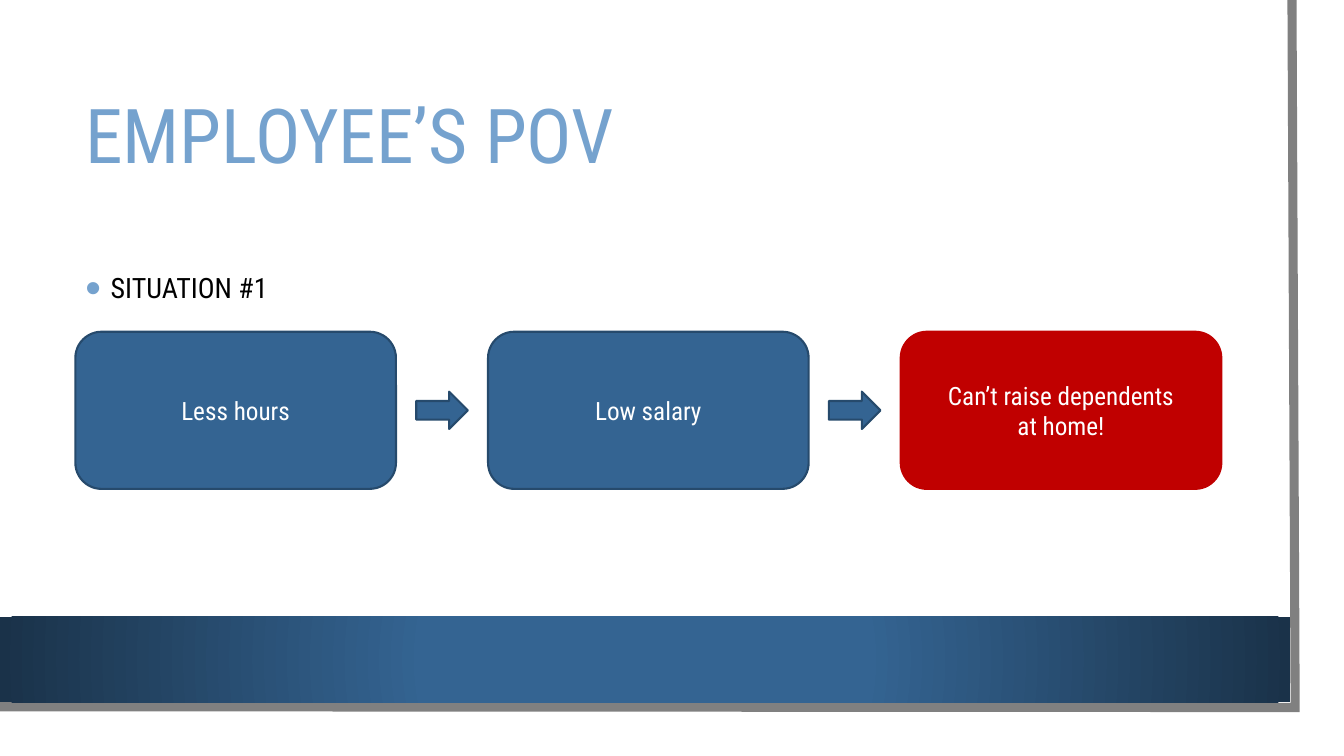
import pptx
import pptx.util
import pptx.oxml
import pptx.oxml.ns
import pptx.dml.color
import pptx.enum.shapes
import pptx.enum.text
from dataclasses import dataclass

Cm = pptx.util.Cm
Pt = pptx.util.Pt
Kind = pptx.enum.shapes.MSO_SHAPE
Align = pptx.enum.text.PP_ALIGN
Mid = pptx.enum.text.MSO_ANCHOR.MIDDLE
Top = pptx.enum.text.MSO_ANCHOR.TOP


@dataclass(frozen=True)
class Theme:
    """Colours, font and type sizes of the slide."""
    font: str = "Roboto Condensed"
    blue: str = "346492"
    edge: str = "264A6C"
    navy: str = "1A3249"
    sky: str = "75A2CE"
    red: str = "C00000"
    gray: str = "808080"
    white: str = "FFFFFF"
    black: str = "000000"
    head: int = 54
    body: int = 20
    label: int = 18


def rgb(code):
    """Return the colour for a hex code."""
    return pptx.dml.color.RGBColor.from_string(code)


def node(xml):
    """Return an XML element in the drawing namespace."""
    space = pptx.oxml.ns.nsdecls("a")
    return pptx.oxml.parse_xml(xml.replace("/>", f" {space}/>", 1)
                               if xml.count("<") == 1
                               else xml.replace(">", f" {space}>", 1))


def write(frame, text, *, font, size, color, align=Align.LEFT,
          anchor=Mid, space=1.0, bullet=None):
    """Fill a text frame, one paragraph a line."""
    frame.word_wrap = True
    frame.vertical_anchor = anchor
    for i, line in enumerate(text.split("\n")):
        para = frame.add_paragraph() if i else frame.paragraphs[0]
        if bullet:
            props = para._p.get_or_add_pPr()
            props.set("marL", str(Cm(0.64)))
            props.set("indent", str(-Cm(0.64)))
            props.append(node(f'<a:buClr><a:srgbClr val="{bullet}"/></a:buClr>'))
            props.append(node('<a:buSzPct val="160000"/>'))
            props.append(node('<a:buFont typeface="Arial"/>'))
            props.append(node('<a:buChar char="•"/>'))
        para.alignment = align
        para.line_spacing = space
        run = para.add_run()
        run.text = line
        run.font.name = font
        run.font.size = Pt(size)
        run.font.color.rgb = rgb(color)


class Deck:
    """Holds the theme and the current slide."""

    def __init__(self, theme):
        """Open a wide deck with one blank slide."""
        self.theme = theme
        self.file = pptx.Presentation()
        self.file.slide_width = Cm(33.87)
        self.file.slide_height = Cm(19.05)
        self.slide = self.file.slides.add_slide(self.file.slide_layouts[6])

    def shape(self, kind, x, y, w, h, fill, line=None):
        """Add a preset shape."""
        item = self.slide.shapes.add_shape(kind, Cm(x), Cm(y), Cm(w), Cm(h))
        item.shadow.inherit = False
        item.fill.solid()
        item.fill.fore_color.rgb = rgb(fill)
        if line:
            item.line.color.rgb = rgb(line)
            item.line.width = Pt(1.5)
        else:
            item.line.fill.background()
        return item

    def text(self, x, y, w, h, words, **style):
        """Add a text box."""
        box = self.slide.shapes.add_textbox(Cm(x), Cm(y), Cm(w), Cm(h))
        write(box.text_frame, words, font=self.theme.font, **style)

    def card(self, x, y, w, h, words, fill, line):
        """Add a rounded box with a centred label."""
        item = self.shape(Kind.ROUNDED_RECTANGLE, x, y, w, h, fill, line)
        write(item.text_frame, words, font=self.theme.font,
              size=self.theme.label, color=self.theme.white,
              align=Align.CENTER)

    def border(self, points):
        """Add the thick open line along the page edge."""
        start, *rest = [(round(x * 100), round(y * 100)) for x, y in points]
        form = self.slide.shapes.build_freeform(*start, scale=Cm(1) / 100)
        form.add_line_segments(rest, close=False)
        item = form.convert_to_shape()
        item.shadow.inherit = False
        item.fill.background()
        item.line.color.rgb = rgb(self.theme.gray)
        item.line.width = Pt(6.5)
        item.line._get_or_add_ln().append(node('<a:miter lim="800000"/>'))

    def band(self, x, y, w, h):
        """Add the footer bar with its radial gradient."""
        item = self.shape(Kind.RECTANGLE, x, y, w, h, self.theme.blue)
        item.fill.gradient()
        tones = ((0.34, self.theme.blue), (1, self.theme.navy))
        for stop, (place, tone) in zip(item.fill.gradient_stops, tones):
            stop.position = place
            stop.color.rgb = rgb(tone)
        grad = item._element.spPr.find(pptx.oxml.ns.qn("a:gradFill"))
        grad.replace(grad.find(pptx.oxml.ns.qn("a:lin")), node(
            '<a:path path="circle"><a:fillToRect l="50000" t="50000" '
            'r="50000" b="50000"/></a:path>'))


def main():
    """Build the slide and save it."""
    theme = Theme()
    deck = Deck(theme)
    deck.border([(32.56, 0), (32.64, 17.83), (-0.08, 17.81)])
    deck.band(0, 15.54, 32.51, 2.16)

    left, wide = 1.9, 28.88
    deck.text(left, 1.9, wide, 3.2, "EMPLOYEE’S POV",
              size=theme.head, color=theme.sky, space=0.9)
    deck.text(left, 6.53, wide, 1.3, "SITUATION #1", size=theme.body,
              color=theme.black, anchor=Top, space=1.2, bullet=theme.sky)

    top, width, height, pitch = 8.36, 8.08, 3.96, 10.4
    long, tall = 1.3, 0.94
    steps = [("Less hours", theme.blue, theme.edge),
             ("Low salary", theme.blue, theme.edge),
             ("Can’t raise dependents\nat home!", theme.red, theme.red)]
    for i, (words, fill, line) in enumerate(steps):
        x = left + i * pitch
        deck.card(x, top, width, height, words, fill, line)
        if i:
            deck.shape(Kind.RIGHT_ARROW, x - (pitch - width + long) / 2,
                       top + (height - tall) / 2, long, tall,
                       theme.blue, theme.edge)
    deck.file.save("out.pptx")


if __name__ == "__main__":
    main()
